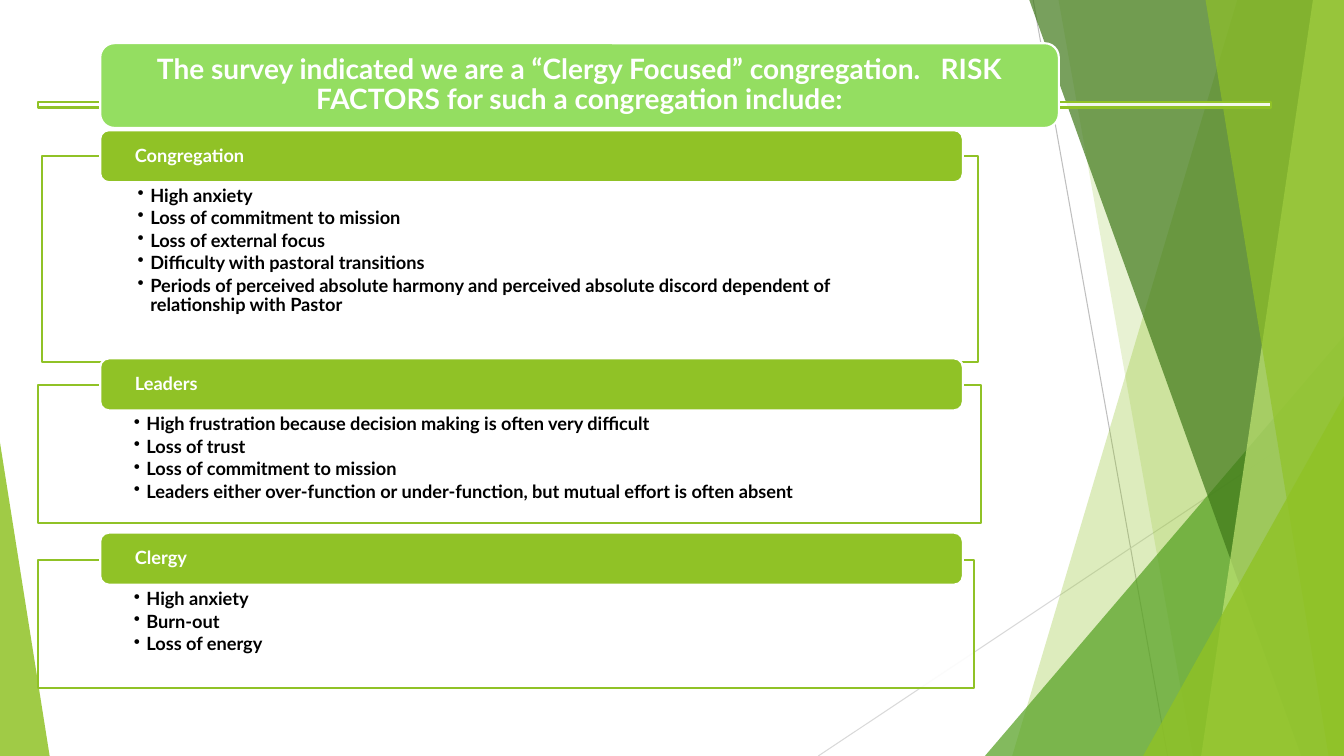
import pptx
import pptx.util
import pptx.dml.color
import pptx.enum.shapes
import pptx.enum.text
import pptx.oxml.ns
import lxml.etree

Pt = pptx.util.Pt
SHAPES = pptx.enum.shapes.MSO_SHAPE
GREEN, WHITE, BLACK = "90C226", "FFFFFF", "000000"


def paint(shape, fill=None, opacity=100, line=None, width=1.5):
    """Set fill, opacity and outline, and remove the theme shadow."""
    qn = pptx.oxml.ns.qn
    if fill:
        shape.fill.solid()
        shape.fill.fore_color.rgb = pptx.dml.color.RGBColor.from_string(fill)
        if opacity < 100:
            color = shape._element.spPr.find(qn("a:solidFill"))[0]
            lxml.etree.SubElement(color, qn("a:alpha"), val=str(opacity * 1000))
    if line:
        shape.line.color.rgb = pptx.dml.color.RGBColor.from_string(line)
        shape.line.width = Pt(width)
    else:
        shape.line.fill.background()
    lxml.etree.SubElement(shape._element.spPr, qn("a:effectLst"))


def write_text(shape, text, size=13, color=WHITE, align="LEFT", anchor="MIDDLE",
               insets=(23, 0, 23, 0), space_after=0, bullet=False):
    """Write one paragraph for each line of text."""
    frame = shape.text_frame
    frame.word_wrap = True
    frame.vertical_anchor = pptx.enum.text.MSO_ANCHOR[anchor]
    frame.margin_left, frame.margin_top, frame.margin_right, frame.margin_bottom = map(Pt, insets)
    for index, line in enumerate(text.split("\n")):
        paragraph = frame.add_paragraph() if index else frame.paragraphs[0]
        paragraph.alignment = pptx.enum.text.PP_ALIGN[align]
        paragraph.line_spacing = 0.9
        paragraph.space_after = Pt(space_after)
        run = paragraph.add_run()
        run.text = line
        run.font.name = "Lato"
        run.font.size = Pt(size)
        run.font.bold = True
        run.font.color.rgb = pptx.dml.color.RGBColor.from_string(color)
        if bullet:
            paragraph.level = 1
            properties = paragraph._p.get_or_add_pPr()
            properties.set("marL", str(Pt(9)))
            properties.set("indent", str(-Pt(9)))
            lxml.etree.SubElement(properties, pptx.oxml.ns.qn("a:buChar"), char="•")


presentation = pptx.Presentation()
presentation.slide_width, presentation.slide_height = Pt(960), Pt(540)
slide = presentation.slides.add_slide(presentation.slide_layouts[6])
shapes = slide.shapes

# Thin background lines
for x1, y1, x2, y2, color in [(738, 0, 834, 540, "BFBFBF"), (960, 290, 584.5, 540, "D9D9D9")]:
    connector = shapes.add_connector(
        pptx.enum.shapes.MSO_CONNECTOR.STRAIGHT, Pt(x1), Pt(y1), Pt(x2), Pt(y2))
    paint(connector, line=color, width=0.75)

# Background facets, back to front: bands run from a top x to a bottom x and
# fill to the right edge; triangles stand on the bottom edge
facets = [
    ("band", 884, 723, GREEN, 30),
    ("band", 756, 852, GREEN, 20),
    ("triangle", 703.5, 240, 256.5, 1, "54A021", 72),
    ("band", 735, 929.5, "3F7819", 70),
    ("band", 938, 858, "C0E474", 70),
    ("band", 861, 949, GREEN, 65),
    ("triangle", 816.5, 283, 143.5, 1, GREEN, 80),
    ("triangle", 0, 316, 35.5, 0, GREEN, 85),
]
for kind, *geometry, color, opacity in facets:
    if kind == "band":
        top_x, bottom_x = geometry
        builder = shapes.build_freeform(Pt(top_x), Pt(-0.7))
        builder.add_line_segments(
            [(Pt(960), Pt(-0.7)), (Pt(960), Pt(540)), (Pt(bottom_x), Pt(540))], close=True)
        facet = builder.convert_to_shape()
    else:
        left, top, width, apex = geometry
        facet = shapes.add_shape(SHAPES.ISOSCELES_TRIANGLE, Pt(left), Pt(top), Pt(width), Pt(540 - top))
        facet.adjustments[0] = apex
    paint(facet, color, opacity)

# Title bar on its narrow strip
strip = shapes.add_shape(SHAPES.RECTANGLE, Pt(27.2), Pt(72.8), Pt(880.5), Pt(4))
paint(strip, WHITE, 90, GREEN)
title = shapes.add_shape(SHAPES.ROUNDED_RECTANGLE, Pt(71.6), Pt(30.9), Pt(684.7), Pt(60.5))
paint(title, "94DE61", line=WHITE)
write_text(title, "The survey indicated we are a “Clergy Focused” congregation.   "
           "RISK FACTORS for such a congregation include:", size=20, align="CENTER")

# Risk groups: heading, heading top, then left, top, width, height of the box
groups = [
    ("Congregation", 93, (30, 111.5, 668.6, 147),
     "High anxiety\nLoss of commitment to mission\nLoss of external focus\n"
     "Difficulty with pastoral transitions\n"
     "Periods of perceived absolute harmony and perceived absolute discord "
     "dependent of relationship with Pastor"),
    ("Leaders", 256, (27.2, 275, 673.5, 98.5),
     "High frustration because decision making is often very difficult\n"
     "Loss of trust\nLoss of commitment to mission\n"
     "Leaders either over-function or under-function, but mutual effort is often absent"),
    ("Clergy", 380.5, (27.2, 400, 668.3, 91.5),
     "High anxiety\nBurn-out\nLoss of energy"),
]
for heading, heading_top, box_place, risks in groups:
    box = shapes.add_shape(SHAPES.RECTANGLE, *map(Pt, box_place))
    paint(box, WHITE, 90, GREEN)
    write_text(box, risks, color=BLACK, anchor="TOP", insets=(68.4, 21.6, 68.4, 7.2),
               space_after=2, bullet=True)
    bar = shapes.add_shape(SHAPES.ROUNDED_RECTANGLE, Pt(71.6), Pt(heading_top), Pt(616.2), Pt(37.1))
    paint(bar, GREEN, line=WHITE)
    write_text(bar, heading)

presentation.save("out.pptx")
